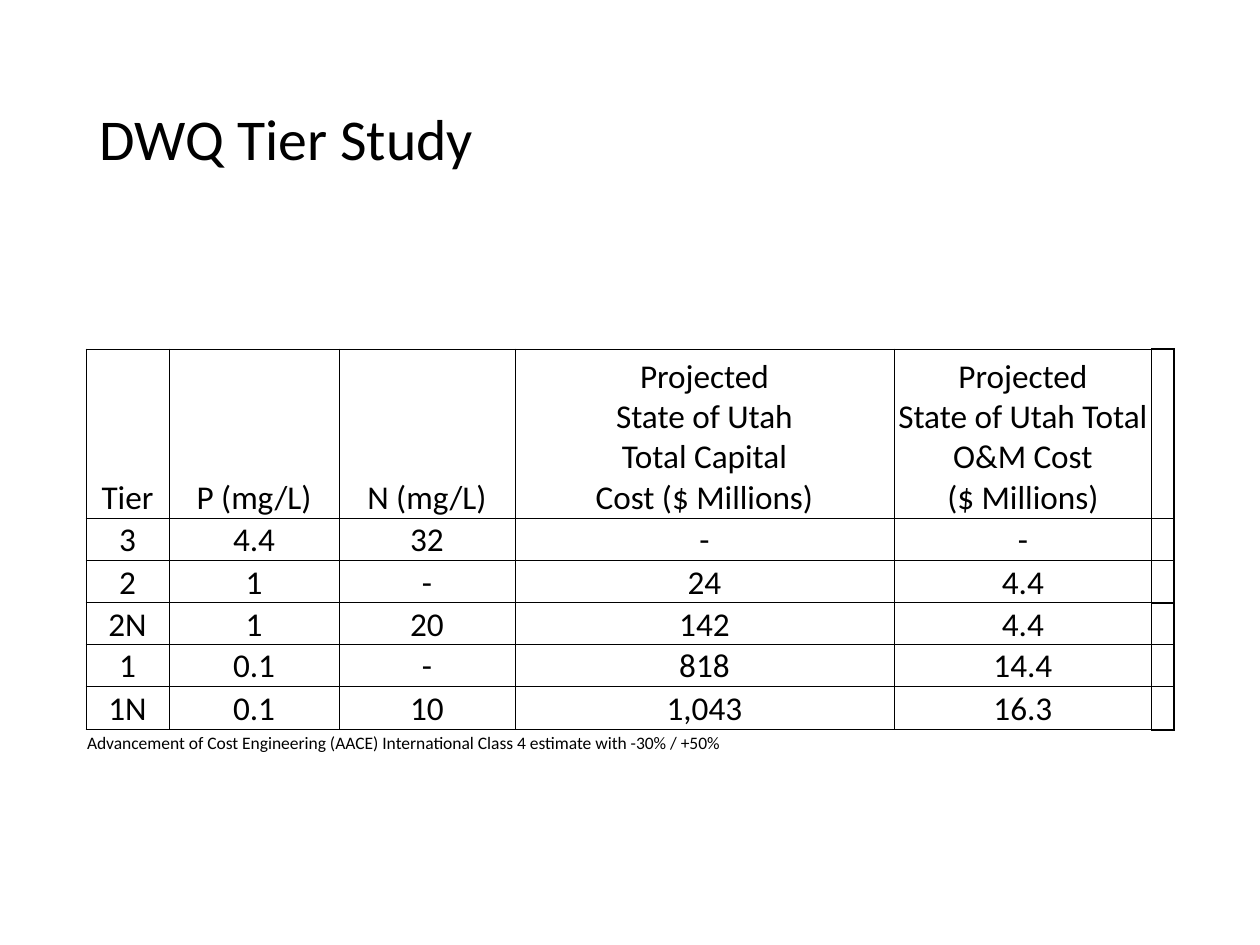
from typing import NamedTuple

from lxml import etree
from pptx import Presentation
from pptx.dml.color import RGBColor
from pptx.enum.text import MSO_ANCHOR, PP_ALIGN
from pptx.oxml.ns import qn
from pptx.util import Pt

PX = 914400 // 126
FONT = "Calibri"
BLACK = "000000"
LEFT, CENTER = PP_ALIGN.LEFT, PP_ALIGN.CENTER
MIDDLE, BOTTOM = MSO_ANCHOR.MIDDLE, MSO_ANCHOR.BOTTOM
THIN, MEDIUM = 0.5, 1.0

COLUMNS = [83, 170, 176, 379, 258, 22]
ROWS = [169, 42, 43, 42, 42, 43, 24]
HEADINGS = [
    "Tier",
    "P (mg/L)",
    "N (mg/L)",
    "Projected\nState of Utah\nTotal Capital\nCost ($ Millions)",
    "Projected\nState of Utah Total O&M Cost\n($ Millions)",
]
TIERS = [
    ["3", "4.4", "32", "-", "-"],
    ["2", "1", "-", "24", "4.4"],
    ["2N", "1", "20", "142", "4.4"],
    ["1", "0.1", "-", "818", "14.4"],
    ["1N", "0.1", "10", "1,043", "16.3"],
]
FOOTNOTE = ("Advancement of Cost Engineering (AACE) International "
            "Class 4 estimate with -30% / +50%")


class Borders(NamedTuple):
    """Line widths in points; zero means no line."""
    left: float = 0
    right: float = 0
    top: float = 0
    bottom: float = 0


def color(value: str) -> RGBColor:
    return RGBColor.from_string(value)


def write(para, text: str, size: float, align) -> None:
    para.text = text
    para.alignment = align
    for span in para.runs:
        span.font.name = FONT
        span.font.size = Pt(size)
        span.font.color.rgb = color(BLACK)
    if not text:
        end = etree.SubElement(para._p, qn("a:endParaRPr"))
        end.set("sz", str(size * 100))


def set_borders(cell, borders: Borders) -> None:
    properties = cell._tc.get_or_add_tcPr()
    for side, width in zip("LRTB", borders):
        line = etree.SubElement(properties, qn(f"a:ln{side}"))
        if width:
            line.set("w", str(Pt(width)))
            fill = etree.SubElement(line, qn("a:solidFill"))
            etree.SubElement(fill, qn("a:srgbClr")).set("val", BLACK)
        else:
            etree.SubElement(line, qn("a:noFill"))


def fill_cell(cell, text: str, size: float, align, borders: Borders) -> None:
    write(cell.text_frame.paragraphs[0], text, size, align)
    cell.vertical_anchor = BOTTOM
    cell.margin_left = cell.margin_right = cell.margin_top = PX
    cell.margin_bottom = 0
    set_borders(cell, borders)
    cell.fill.background()


def add_title(page, text: str) -> None:
    box = page.shapes.add_textbox(87 * PX, 50 * PX, 1086 * PX, 183 * PX)
    box.text_frame.word_wrap = True
    box.text_frame.vertical_anchor = MIDDLE
    para = box.text_frame.paragraphs[0]
    write(para, text, 33, LEFT)
    para.line_spacing = 0.9


def add_cost_table(page) -> None:
    frame = page.shapes.add_table(len(ROWS), len(COLUMNS), 86 * PX, 349 * PX,
                                  sum(COLUMNS) * PX, sum(ROWS) * PX)
    table = frame.table
    table.first_row = table.horz_banding = False
    for column, width in zip(table.columns, COLUMNS):
        column.width = width * PX
    for row, height in zip(table.rows, ROWS):
        row.height = height * PX

    # Headings and tiers, each row closed by a narrow empty cell
    grid = [HEADINGS, *TIERS]
    edge = len(COLUMNS) - 1
    for r, values in enumerate(grid):
        for c, value in enumerate(values):
            fill_cell(table.cell(r, c), value, 19, CENTER, Borders(*[THIN] * 4))
        top = MEDIUM if r in (0, 3) else THIN
        bottom = MEDIUM if r in (2, 5) else THIN
        fill_cell(table.cell(r, edge), "", 10, LEFT,
                  Borders(THIN, MEDIUM, top, bottom))

    # Footnote across the value columns
    last = len(grid)
    for c in range(edge):
        fill_cell(table.cell(last, c), FOOTNOTE if c == 0 else "", 10, LEFT,
                  Borders(top=THIN))
    table.cell(last, 0).merge(table.cell(last, edge - 1))
    fill_cell(table.cell(last, edge), "", 10, LEFT, Borders(top=MEDIUM))


def main() -> None:
    deck = Presentation()
    deck.slide_width, deck.slide_height = 1260 * PX, 945 * PX
    page = deck.slides.add_slide(deck.slide_layouts[6])
    add_title(page, "DWQ Tier Study")
    add_cost_table(page)
    deck.save("out.pptx")


if __name__ == "__main__":
    main()
